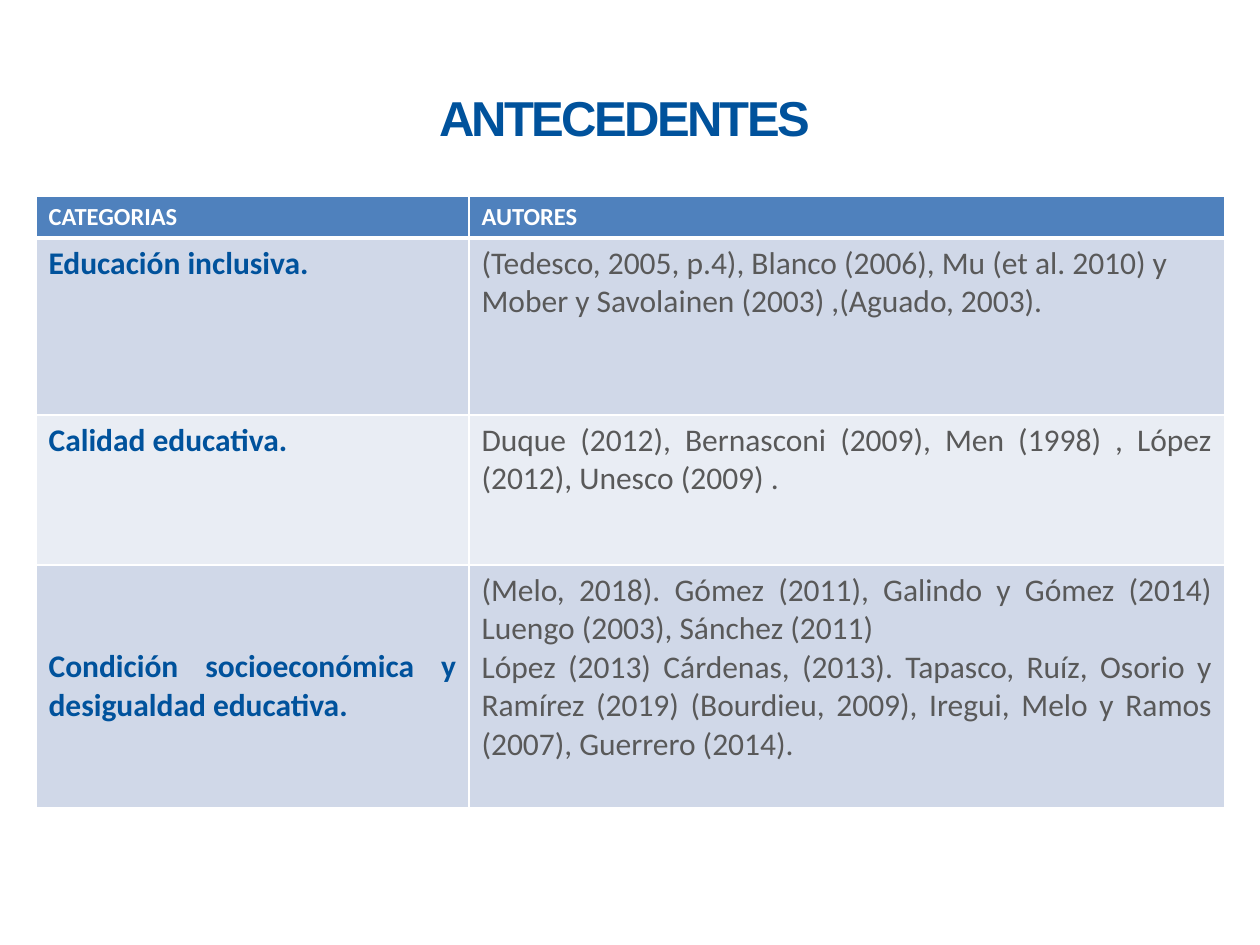
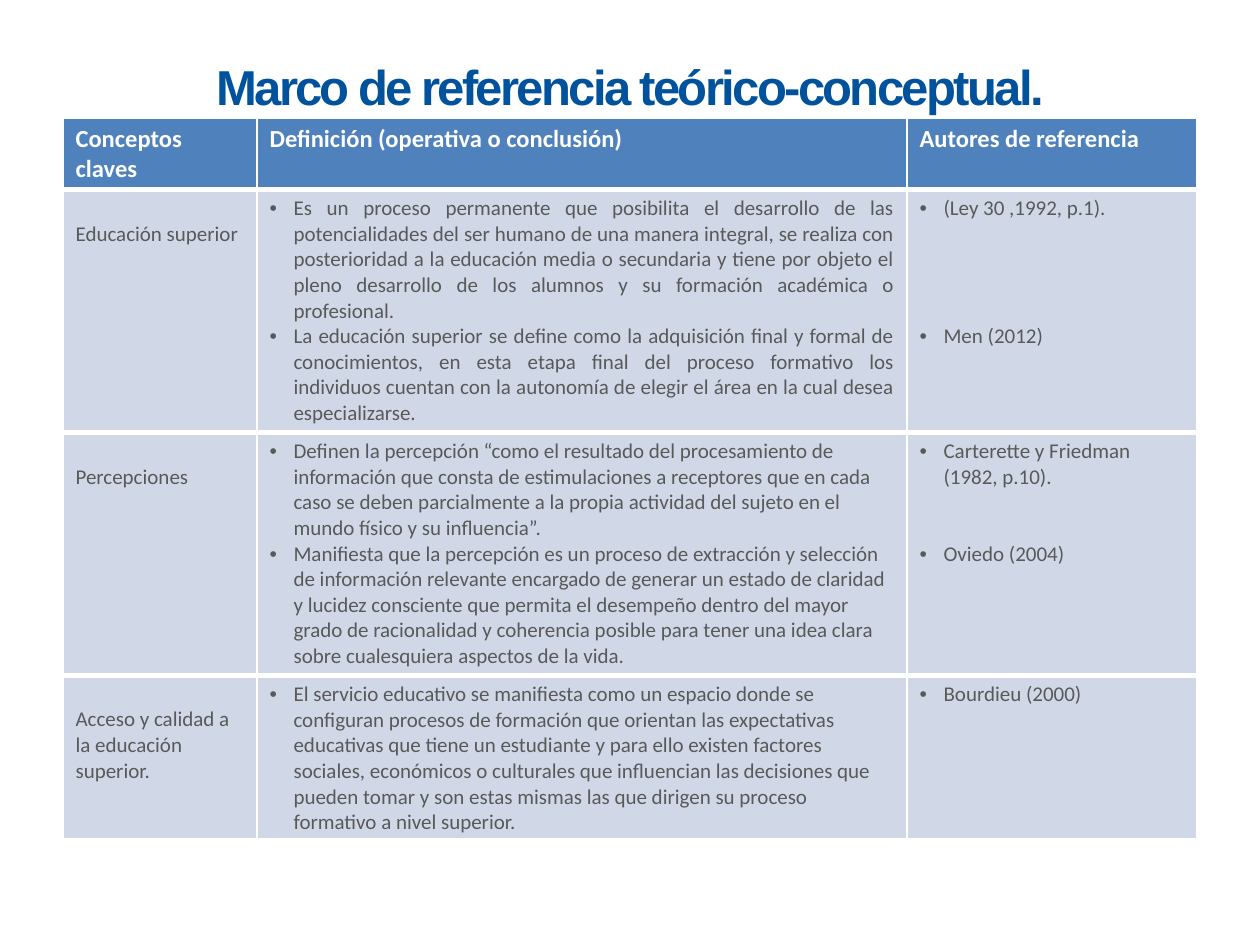
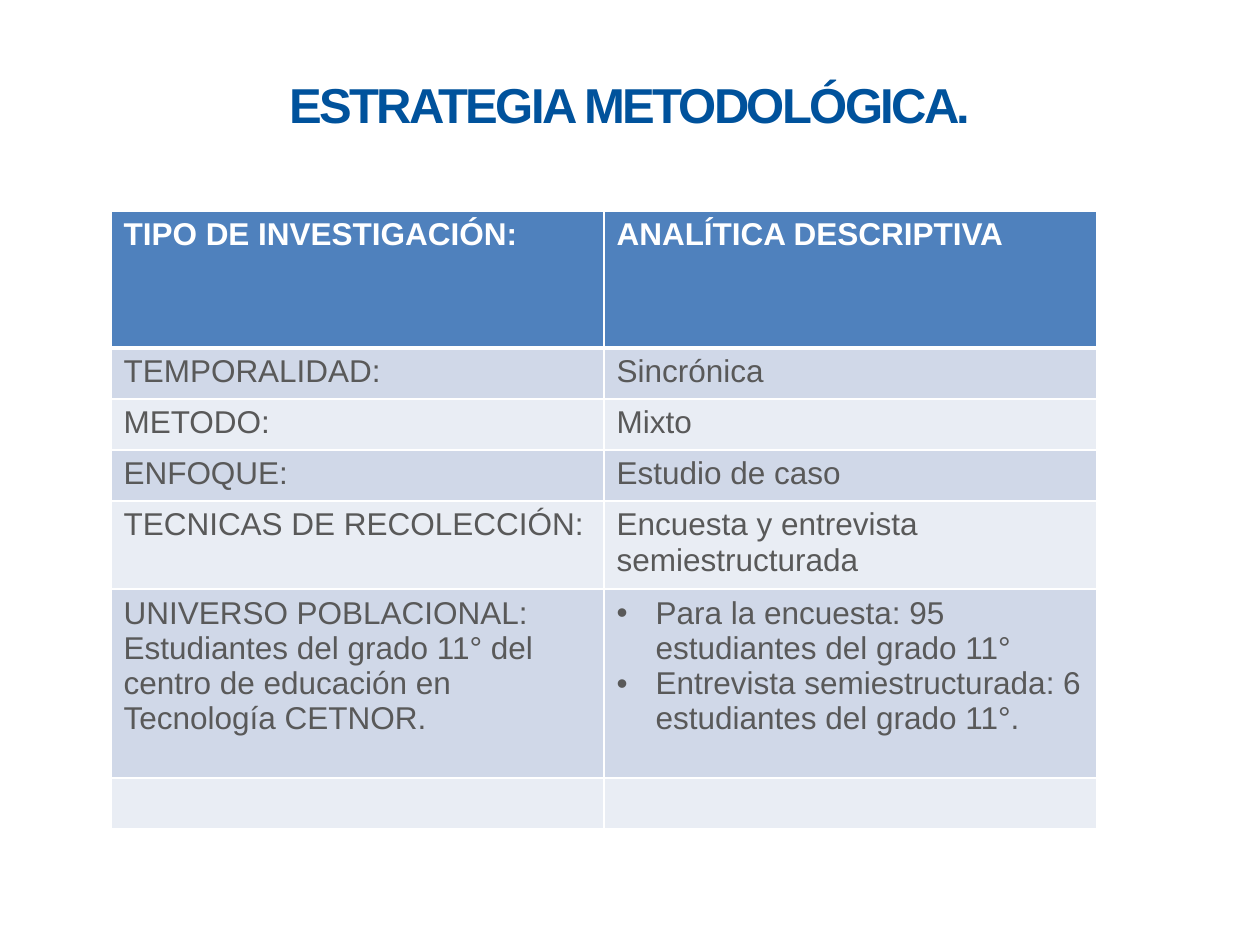
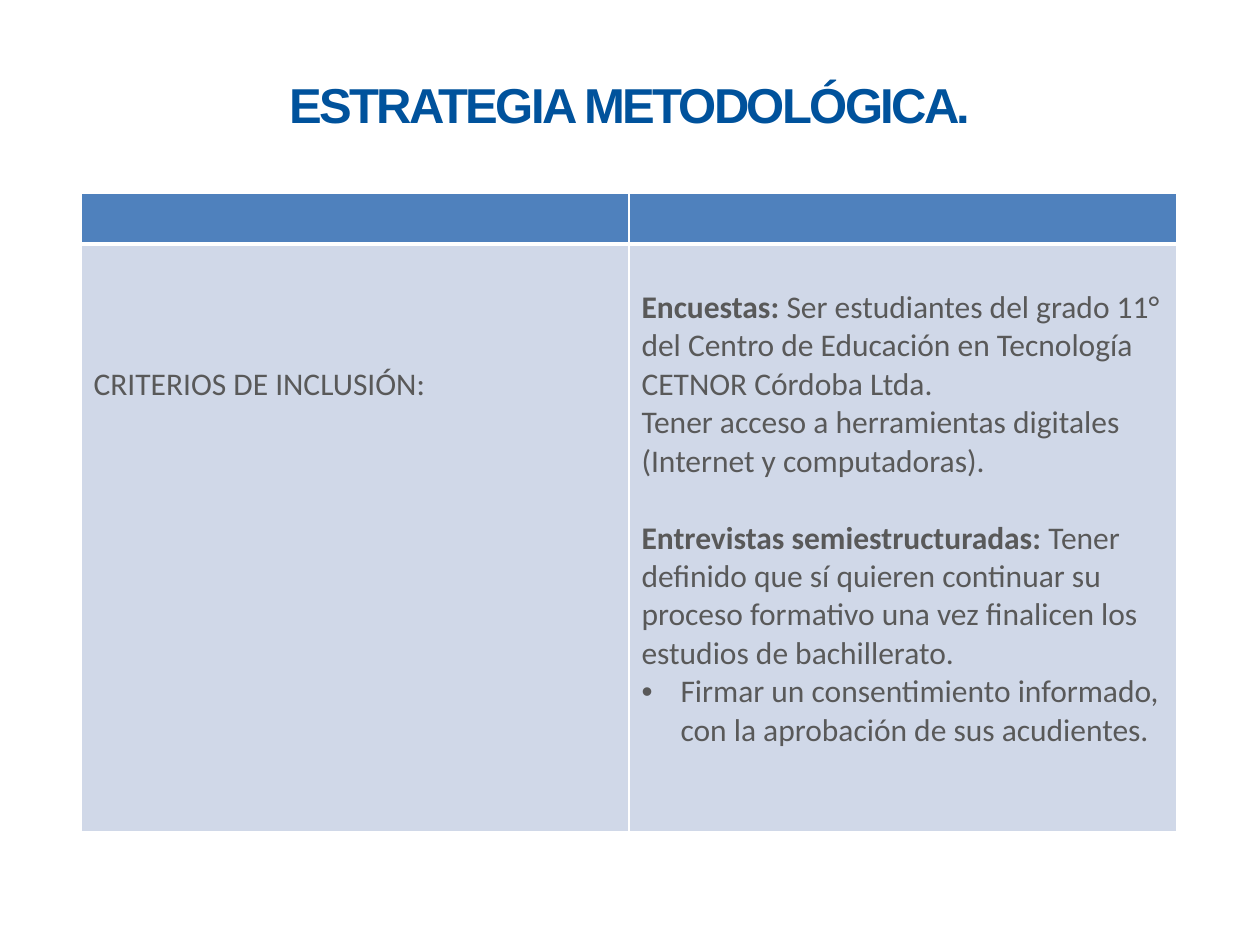
from typing import NamedTuple

from lxml import etree
from pptx import Presentation
from pptx.dml.color import RGBColor
from pptx.enum.text import MSO_ANCHOR, PP_ALIGN
from pptx.oxml.ns import qn
from pptx.util import Emu, Pt

LEFT, CENTER, JUSTIFY = PP_ALIGN.LEFT, PP_ALIGN.CENTER, PP_ALIGN.JUSTIFY
MIDDLE = MSO_ANCHOR.MIDDLE

BLUE, HEADER, BODY, WHITE = "00529C", "4F81BD", "595959", "FFFFFF"
BANDS = ("D0D8E8", "E9EDF4")
LINE_HEIGHT = 1.22
INSET = 6
THIN, THICK = 1, 3


def px(n):
    return Emu(round(n * 914400 / 126))


def rgb(value):
    return RGBColor.from_string(value)


class Para(NamedTuple):
    """A cell paragraph; skip is the gap above it, in text lines."""
    text: str
    lead: str = ""
    bullet: bool = False
    justify: bool = False
    skip: int = 0


def bullet(text, **options):
    return Para(text, bullet=True, **options)


def just(text, **options):
    return Para(text, justify=True, **options)


class Deck:
    def __init__(self):
        self.prs = Presentation()
        self.prs.slide_width, self.prs.slide_height = px(1260), px(945)
        self.s = None

    def slide(self, title, top, height):
        self.s = self.prs.slides.add_slide(self.prs.slide_layouts[6])
        sp = self.s.shapes.add_textbox(px(63), px(top), px(1134), px(height))
        tf = sp.text_frame
        tf.word_wrap = True
        tf.vertical_anchor = MIDDLE
        tf.text = title
        p = tf.paragraphs[0]
        p.alignment = CENTER
        r = p.runs[0]
        self.style(r, 28, BLUE, "Arial", True)
        r.font._element.set("spc", "-150")

    def style(self, r, size, color, font, bold=False):
        r.font.size = Pt(size)
        r.font.name = font
        r.font.bold = bold
        r.font.color.rgb = rgb(color)

    def borders(self, cell, top, bottom):
        tcPr = cell._tc.get_or_add_tcPr()
        for side, width in zip("LRTB", (THIN, THIN, top, bottom)):
            ln = etree.SubElement(tcPr, qn(f"a:ln{side}"), w=str(Pt(width)))
            fill = etree.SubElement(ln, qn("a:solidFill"))
            etree.SubElement(fill, qn("a:srgbClr"), val=WHITE)

    def bullets(self, p, indent):
        pPr = p._p.get_or_add_pPr()
        pPr.set("marL", str(px(indent)))
        pPr.set("indent", str(-px(indent)))
        etree.SubElement(pPr, qn("a:buFont"), typeface="Arial")
        etree.SubElement(pPr, qn("a:buChar"), char="•")

    def fill_cell(self, cell, content, size, color, font, bold, indent):
        paras = [Para(content)] if isinstance(content, str) else content
        tf = cell.text_frame
        for i, para in enumerate(paras):
            p = tf.add_paragraph() if i else tf.paragraphs[0]
            gap = Pt(para.skip * size * LINE_HEIGHT)
            if para.bullet:
                self.bullets(p, indent)
            if i and gap:
                p.space_before = gap
            elif gap:
                cell.margin_top = px(INSET) + gap
            p.alignment = JUSTIFY if para.justify else LEFT
            for text, strong in ((para.lead, True), (para.text, bold)):
                if text:
                    r = p.add_run()
                    r.text = text
                    self.style(r, size, color, font, strong)

    def table(self, left, top, widths, heights, rows, font="Calibri",
              head_size=18, size=18, indent=39, bands=BANDS, rule=THIN,
              blue_keys=False):
        """Header row plus banded body; rule is the line between body rows."""
        frame = self.s.shapes.add_table(len(rows), len(widths), px(left), px(top),
                                        px(sum(widths)), px(sum(heights)))
        tbl = frame.table
        tbl.horz_banding = False
        for column, width in zip(tbl.columns, widths):
            column.width = px(width)
        for i, (height, row) in enumerate(zip(heights, rows)):
            tbl.rows[i].height = px(height)
            head = i == 0
            above = THIN if head else THICK if i == 1 else rule
            below = THICK if head else rule
            for j, content in enumerate(row):
                cell = tbl.cell(i, j)
                self.borders(cell, above, below)
                cell.fill.solid()
                band = HEADER if head else bands[(i - 1) % len(bands)]
                cell.fill.fore_color.rgb = rgb(band)
                key = blue_keys and j == 0
                color = WHITE if head else BLUE if key else BODY
                self.fill_cell(cell, content, head_size if head else size,
                               color, font, head or key, indent)


def background(deck):
    deck.slide("ANTECEDENTES ", 38, 158)
    deck.table(36, 196, (433, 756), (42, 177, 150, 243), [
        ("CATEGORIAS", "AUTORES"),
        ([just("Educación inclusiva.")],
         "(Tedesco, 2005, p.4), Blanco (2006), Mu (et al. 2010) y Mober y "
         "Savolainen (2003) ,(Aguado, 2003)."),
        ("Calidad educativa.",
         [just("Duque (2012), Bernasconi (2009), Men (1998) , López (2012), "
               "Unesco (2009) .")]),
        ([just("Condición socioeconómica y desigualdad educativa.", skip=2)],
         [just("(Melo, 2018). Gómez (2011), Galindo y Gómez (2014) Luengo (2003), "
               "Sánchez (2011)"),
          just("López (2013) Cárdenas, (2013). Tapasco, Ruíz, Osorio y Ramírez "
               "(2019) (Bourdieu, 2009), Iregui, Melo y Ramos (2007), "
               "Guerrero (2014).")]),
    ], head_size=14, blue_keys=True)


def framework(deck):
    deck.slide("Marco de referencia teórico-conceptual.", 14, 144)
    deck.table(63, 118, (194, 650, 290), (71, 243, 243, 165), [
        ("Conceptos claves", "Definición (operativa o conclusión)",
         "Autores de referencia"),
        ([Para("Educación superior", skip=1)],
         [bullet("Es un proceso permanente que posibilita el desarrollo de las "
                 "potencialidades del ser humano de una manera integral, se realiza "
                 "con posterioridad a la educación media o secundaria y tiene por "
                 "objeto el pleno desarrollo de los alumnos y su formación académica "
                 "o profesional.", justify=True),
          bullet("La educación superior se define como la adquisición final y formal "
                 "de conocimientos, en esta etapa final del proceso formativo los "
                 "individuos cuentan con la autonomía de elegir el área en la cual "
                 "desea especializarse.", justify=True)],
         [bullet("(Ley 30 ,1992, p.1)."), bullet("Men (2012)", skip=4)]),
        ([Para("Percepciones", skip=1)],
         [bullet("Definen la percepción “como el resultado del procesamiento de "
                 "información que consta de estimulaciones a receptores que en cada "
                 "caso se deben parcialmente a la propia actividad del sujeto en el "
                 "mundo físico y su influencia”."),
          bullet("Manifiesta que la percepción es un proceso de extracción y "
                 "selección de información relevante encargado de generar un estado "
                 "de claridad y lucidez consciente que permita el desempeño dentro "
                 "del mayor grado de racionalidad y coherencia posible para tener "
                 "una idea clara sobre cualesquiera aspectos de la vida.")],
         [bullet("Carterette y Friedman (1982, p.10)."),
          bullet("Oviedo (2004)", skip=2)]),
        ([Para("Acceso y calidad a la educación superior.", skip=1)],
         [bullet("El servicio educativo se manifiesta como un espacio donde se "
                 "configuran procesos de formación que orientan las expectativas "
                 "educativas que tiene un estudiante y para ello existen factores "
                 "sociales, económicos o culturales que influencian las decisiones "
                 "que pueden tomar y son estas mismas las que dirigen su proceso "
                 "formativo a nivel superior.")],
         [bullet("Bourdieu (2000)")]),
    ], head_size=14, size=12, indent=24, bands=BANDS[:1], rule=THICK)


def strategy(deck):
    deck.slide("ESTRATEGIA METODOLÓGICA.", 38, 131)
    deck.table(111, 211, (493, 493), (137, 51, 51, 51, 83, 189, 51), [
        ("TIPO DE INVESTIGACIÓN:", "ANALÍTICA DESCRIPTIVA"),
        ("TEMPORALIDAD:", "Sincrónica"),
        ("METODO:", "Mixto"),
        ("ENFOQUE:", "Estudio de caso"),
        ("TECNICAS DE RECOLECCIÓN:", "Encuesta y entrevista semiestructurada"),
        ("UNIVERSO POBLACIONAL: Estudiantes del grado 11° del centro de educación "
         "en Tecnología CETNOR.",
         [bullet("Para la encuesta: 95 estudiantes del grado 11°"),
          bullet("Entrevista semiestructurada: 6 estudiantes del grado 11°.")]),
        ("", ""),
    ], font="Arial")


def inclusion(deck):
    deck.slide("ESTRATEGIA METODOLÓGICA.", 38, 131)
    deck.table(81, 193, (548, 548), (51, 588), [
        ("", ""),
        ([Para("CRITERIOS DE INCLUSIÓN:", skip=3)],
         [Para("Ser estudiantes del grado 11° del Centro de Educación en Tecnología "
               "CETNOR Córdoba Ltda.", lead="Encuestas: ", skip=1),
          Para("Tener acceso a herramientas digitales (Internet y computadoras)."),
          Para("Tener definido que sí quieren continuar su proceso formativo una vez "
               "finalicen los estudios de bachillerato.",
               lead="Entrevistas semiestructuradas: ", skip=1),
          bullet("Firmar un consentimiento informado, con la aprobación de sus "
                 "acudientes.")]),
    ])


def main():
    deck = Deck()
    for build in (background, framework, strategy, inclusion):
        build(deck)
    deck.prs.save("out.pptx")


if __name__ == "__main__":
    main()
